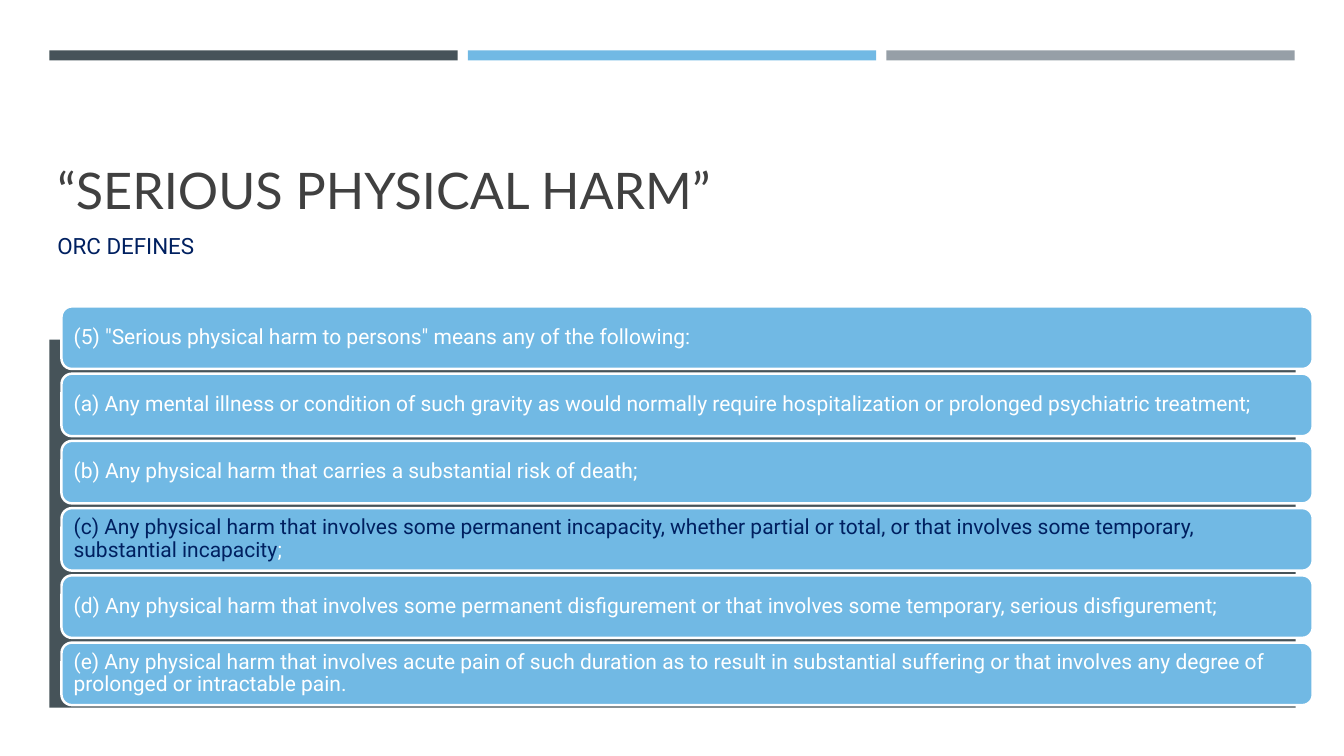
import pptx
import pptx.util
import pptx.dml.color
import pptx.enum.shapes
import pptx.enum.text

WIDE, HIGH = 13.33, 7.5
DARK, BLUE, GREY, NAVY, WHITE = "465359", "71B9E4", "969FA7", "002060", "FFFFFF"
KIND = pptx.enum.shapes.MSO_SHAPE
ANCHOR = pptx.enum.text.MSO_ANCHOR
LEFT = pptx.enum.text.PP_ALIGN.LEFT
Inches, Pt = pptx.util.Inches, pptx.util.Pt

# Grid: three bar columns, six clause rows
BAR_LEFT, BAR_STEP, BAR_WIDE = 0.49, 4.15, 4.05
ROW_TOP, ROW_STEP, ROW_HIGH = 3.04, 0.667, 0.62

CLAUSES = [
    [('(5) "Serious physical harm to persons" means any of the following:', WHITE)],
    [("(a) Any mental illness or condition of such gravity as would normally "
      "require hospitalization or prolonged psychiatric treatment;", WHITE)],
    [("(b) Any physical harm that carries a substantial risk of death;", WHITE)],
    [("(c) Any physical harm that involves some permanent incapacity, whether "
      "partial or total, or that involves some temporary, substantial incapacity", NAVY),
     (";", WHITE)],
    [("(d) Any physical harm that involves some permanent disfigurement or that "
      "involves some temporary, serious disfigurement;", WHITE)],
    [("(e) Any physical harm that involves acute pain of such duration as to result "
      "in substantial suffering or that involves any degree of prolonged or "
      "intractable pain.", WHITE)],
]


def tint(hue):
    return pptx.dml.color.RGBColor.from_string(hue)


def apply(thing, form):
    for name, value in form.items():
        setattr(thing, name, value)


def place(shape, left, top, width, height):
    apply(shape, {"left": Inches(left), "top": Inches(top),
                  "width": Inches(width), "height": Inches(height)})


def add_block(slide, kind, box, hue, edge=None):
    shape = slide.shapes.add_shape(kind, *map(Inches, box))
    shape.shadow.inherit = False
    shape.fill.solid()
    shape.fill.fore_color.rgb = tint(hue)
    if edge:
        shape.line.color.rgb = tint(edge)
        shape.line.width = Pt(1.75)
    else:
        shape.line.fill.background()
    return shape


def write(shape, runs, size, face, anchor, inset=(0.1, 0.05), **form):
    """Fill a shape with one left-aligned paragraph of (text, hue) runs."""
    side, edge = map(Inches, inset)
    frame = shape.text_frame
    apply(frame, {"word_wrap": True, "vertical_anchor": anchor,
                  "auto_size": pptx.enum.text.MSO_AUTO_SIZE.NONE,
                  "margin_left": side, "margin_right": side,
                  "margin_top": edge, "margin_bottom": edge})
    para = frame.paragraphs[0]
    apply(para, {"alignment": LEFT, **form})
    for text, hue in runs:
        run = para.add_run()
        run.text = text
        apply(run.font, {"size": Pt(size), "name": face})
        run.font.color.rgb = tint(hue)


def add_clause(slide, row, runs):
    box = (0.61, ROW_TOP + row * ROW_STEP, 12.41, ROW_HIGH)
    shape = add_block(slide, KIND.ROUNDED_RECTANGLE, box, BLUE, WHITE)
    write(shape, runs, 15, "Roboto", ANCHOR.MIDDLE, (0.09, 0.06), line_spacing=0.9)


def main():
    deck = pptx.Presentation()
    apply(deck, {"slide_width": Inches(WIDE), "slide_height": Inches(HIGH)})
    slide = deck.slides.add_slide(deck.slide_layouts[5])

    # Top bars and dark panel
    for col, hue in enumerate((DARK, BLUE, GREY)):
        box = (BAR_LEFT + col * BAR_STEP, 0.5, BAR_WIDE, 0.1)
        add_block(slide, KIND.RECTANGLE, box, hue)
    add_block(slide, KIND.RECTANGLE, (BAR_LEFT, 3.37, 12.36, 3.65), DARK)

    # Title and subtitle
    title = slide.shapes.title
    place(title, 0.47, 1.12, 12.19, 1.11)
    write(title, [("“SERIOUS PHYSICAL HARM”", "404040")], 36, "Lato", ANCHOR.BOTTOM)
    label = slide.shapes.add_textbox(*map(Inches, (0.47, 2.23, 12.02, 0.6)))
    write(label, [("ORC DEFINES", NAVY)], 16, "Roboto", ANCHOR.TOP,
          line_spacing=1.1, space_before=Pt(3.2), space_after=Pt(6))

    # Clauses
    for row, runs in enumerate(CLAUSES):
        add_clause(slide, row, runs)

    deck.save("out.pptx")


if __name__ == "__main__":
    main()
